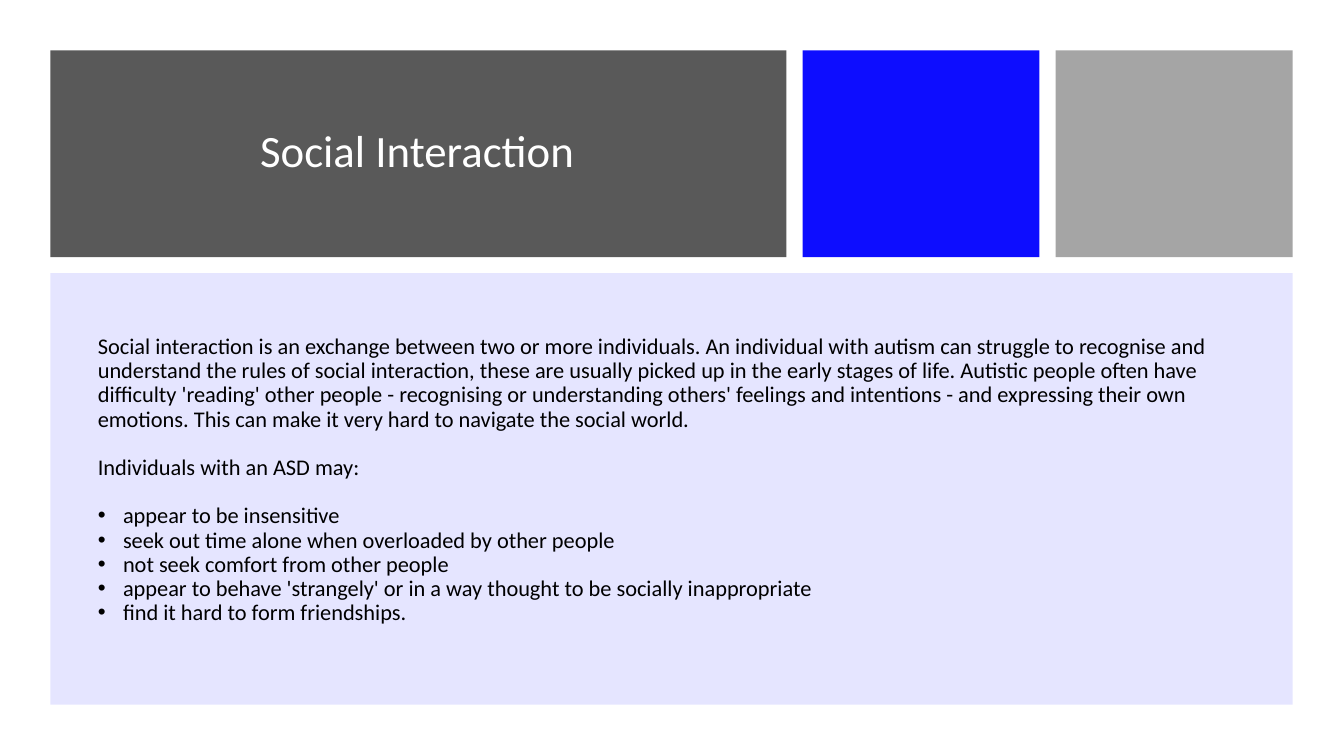
from lxml.etree import SubElement
from pptx import Presentation
from pptx.dml.color import RGBColor
from pptx.enum.shapes import MSO_SHAPE
from pptx.enum.text import MSO_ANCHOR, MSO_AUTO_SIZE, PP_ALIGN
from pptx.oxml.ns import qn
from pptx.util import Inches, Pt

WHITE = RGBColor(0xFF, 0xFF, 0xFF)
BLACK = RGBColor(0x00, 0x00, 0x00)
DARK_GREY = RGBColor(0x59, 0x59, 0x59)
LIGHT_GREY = RGBColor(0xA5, 0xA5, 0xA5)
BLUE = RGBColor(0x00, 0x00, 0xFF)
LAVENDER = RGBColor(0x80, 0x80, 0xFF)

# Grid: three columns and two rows, in inches
MARGIN, GAP = 0.5, 0.16
COLS = [7.3, 2.35, 2.35]
ROWS = [2.05, 4.28]
LEFTS = [MARGIN + sum(COLS[:i]) + GAP * i for i in range(3)]
TOPS = [MARGIN, MARGIN + ROWS[0] + GAP]
FULL_WIDTH = sum(COLS) + 2 * GAP

INTRO = (
    "Social interaction is an exchange between two or more individuals. "
    "An individual with autism can struggle to recognise and understand the rules "
    "of social interaction, these are usually picked up in the early stages of life. "
    "Autistic people often have difficulty 'reading' other people - recognising or "
    "understanding others' feelings and intentions - and expressing their own emotions. "
    "This can make it very hard to navigate the social world."
)
TRAITS = [
    "appear to be insensitive",
    "seek out time alone when overloaded by other people",
    "not seek comfort from other people",
    "appear to behave 'strangely' or in a way thought to be socially inappropriate",
    "find it hard to form friendships.",
]
BODY_SIZE = 16
BLANK_LINE = 17.3


def add_text(p, text, size=BODY_SIZE, color=BLACK, after=0, bullet=False):
    p.alignment = PP_ALIGN.LEFT
    p.line_spacing = 0.9
    p.space_before, p.space_after = Pt(0), Pt(after)
    pPr = p._p.get_or_add_pPr()
    indent = Inches(0.25) if bullet else 0
    pPr.set("marL", str(indent))
    pPr.set("indent", str(-indent))
    if bullet:
        SubElement(pPr, qn("a:buFont")).set("typeface", "Arial")
        SubElement(pPr, qn("a:buChar")).set("char", "•")
    else:
        SubElement(pPr, qn("a:buNone"))
    r = p.add_run()
    r.text = text
    r.font.name, r.font.size = "Calibri", Pt(size)
    r.font.color.rgb = color


prs = Presentation()
prs.slide_width, prs.slide_height = Inches(13.33), Inches(7.5)
s = prs.slides.add_slide(prs.slide_layouts[1])
title, body = s.placeholders

# Coloured panels: column, row, width, fill, opacity in percent
panels = [
    (0, 0, COLS[0], DARK_GREY, 100),
    (1, 0, COLS[1], BLUE, 95),
    (2, 0, COLS[2], LIGHT_GREY, 100),
    (0, 1, FULL_WIDTH, LAVENDER, 20),
]
for col, row, width, color, opacity in panels:
    sp = s.shapes.add_shape(MSO_SHAPE.RECTANGLE, Inches(LEFTS[col]), Inches(TOPS[row]),
                            Inches(width), Inches(ROWS[row]))
    sp.shadow.inherit = False
    sp.line.fill.background()
    sp.fill.solid()
    sp.fill.fore_color.rgb = color
    if opacity < 100:
        srgb = sp._element.spPr.find(qn("a:solidFill")).find(qn("a:srgbClr"))
        SubElement(srgb, qn("a:alpha")).set("val", str(opacity * 1000))

# Placeholders, placed in front of the panels
for sp, box in [(title, (2.48, 1.1, 3.35, 0.84)), (body, (0.87, 2.97, 11.59, 3.59))]:
    sp.left, sp.top, sp.width, sp.height = [Inches(v) for v in box]
    tf = sp.text_frame
    tf.word_wrap = True
    tf.auto_size = MSO_AUTO_SIZE.NONE
    tf.vertical_anchor = MSO_ANCHOR.MIDDLE
    s.shapes._spTree.append(sp._element)

# Title
add_text(title.text_frame.paragraphs[0], "Social Interaction", size=32, color=WHITE)

# Body: introduction, lead-in and bullet list
tf = body.text_frame
add_text(tf.paragraphs[0], INTRO, after=BLANK_LINE)
add_text(tf.add_paragraph(), "Individuals with an ASD may:", after=BLANK_LINE)
for trait in TRAITS:
    add_text(tf.add_paragraph(), trait, bullet=True)

prs.save("out.pptx")
